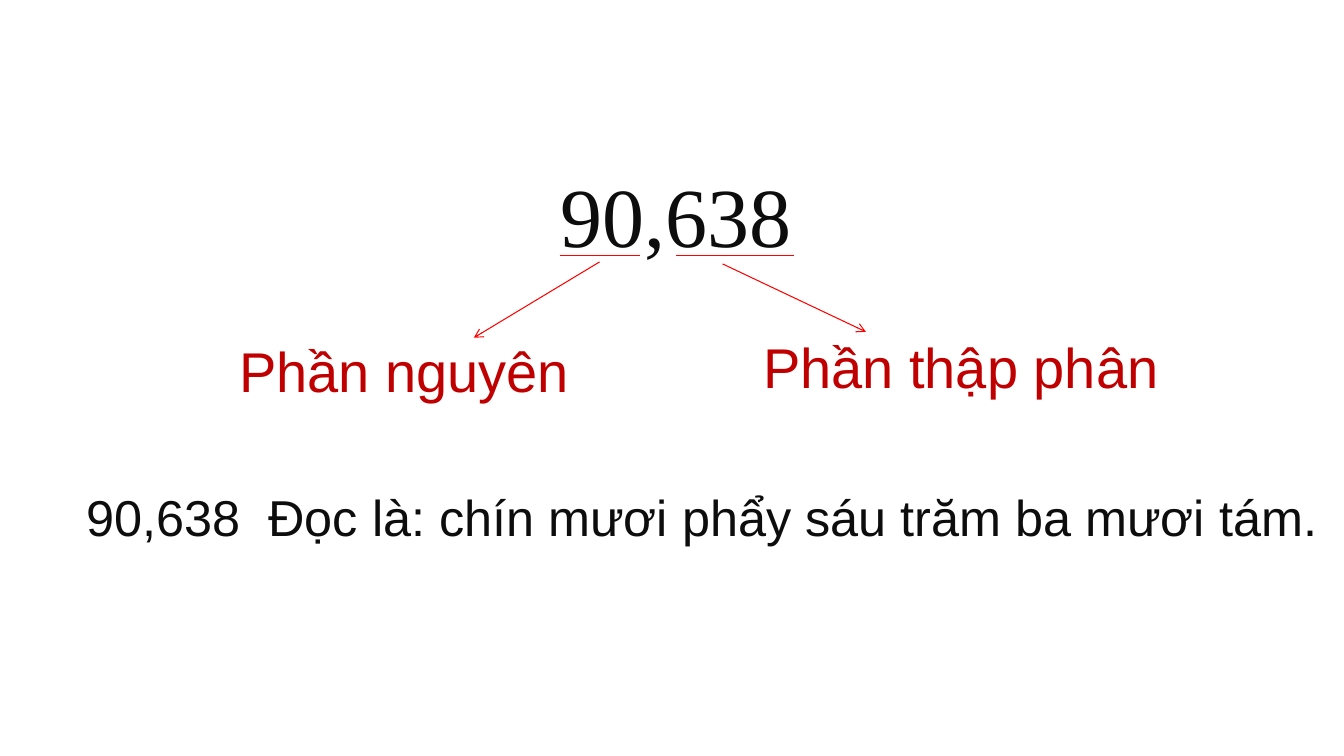
from lxml import etree
from pptx import Presentation
from pptx.dml.color import RGBColor
from pptx.enum import shapes, text
from pptx.oxml import ns
from pptx.util import Cm, Pt

# Content: lengths in cm
INK, LABEL, RULE = "0D0D0D", "C00000", "FF0000"
NUMBER = ("90,638", (13.64, 3.99, 6.78, 2.82))
READING = ("90,638  Đọc là: chín mươi phẩy sáu trăm ba mươi tám.",
           (1.93, 12.12, 31.93, 1.47))
UNDERLINE_Y = 6.45
PARTS = [
    {"label": "Phần thập phân", "box": (18.8, 8.26, 10.82, 1.96),
     "underline": (17.04, 20.02), "arrow": ((18.21, 6.65), (21.82, 8.36))},
    {"label": "Phần nguyên", "box": (5.18, 8.36, 10.01, 1.96),
     "underline": (14.1, 16.13), "arrow": ((15.11, 6.6), (11.94, 8.51))},
]

deck = Presentation()
deck.slide_width, deck.slide_height = Cm(33.87), Cm(19.05)
slide = deck.slides.add_slide(deck.slide_layouts[6])


def color(hex_code):
    return RGBColor.from_string(hex_code)


def add_text(words, box, size, ink=INK, font="Arial", centered=True, grow=True):
    frame = slide.shapes.add_textbox(*map(Cm, box)).text_frame
    frame.word_wrap = True
    frame.auto_size = (text.MSO_AUTO_SIZE.SHAPE_TO_FIT_TEXT if grow
                       else text.MSO_AUTO_SIZE.NONE)
    paragraph = frame.paragraphs[0]
    paragraph.alignment = text.PP_ALIGN.CENTER if centered else text.PP_ALIGN.LEFT
    # Space before as a share of the text size
    before = etree.SubElement(paragraph._p.get_or_add_pPr(), ns.qn("a:spcBef"))
    etree.SubElement(before, ns.qn("a:spcPct"), val="20000")
    run = paragraph.add_run()
    run.text = words
    run.font.name, run.font.size = font, Pt(size)
    run.font.color.rgb = color(ink)


def add_line(start, end, arrow=False):
    line = slide.shapes.add_connector(
        shapes.MSO_CONNECTOR.STRAIGHT, *map(Cm, start + end))
    line.line.color.rgb = color(RULE)
    line.line.width = Pt(0.75)
    if arrow:
        etree.SubElement(line.line._get_or_add_ln(), ns.qn("a:tailEnd"), type="arrow")
    etree.SubElement(line._element.spPr, ns.qn("a:effectLst"))


# Reading and number
add_text(*READING, size=36, centered=False, grow=False)
add_text(*NUMBER, size=60, font="Times New Roman")

# Each part: label, underline and arrow
for part in PARTS:
    add_text(part["label"], part["box"], size=40, ink=LABEL)
    left, right = part["underline"]
    add_line((left, UNDERLINE_Y), (right, UNDERLINE_Y))
    add_line(*part["arrow"], arrow=True)

deck.save("out.pptx")
